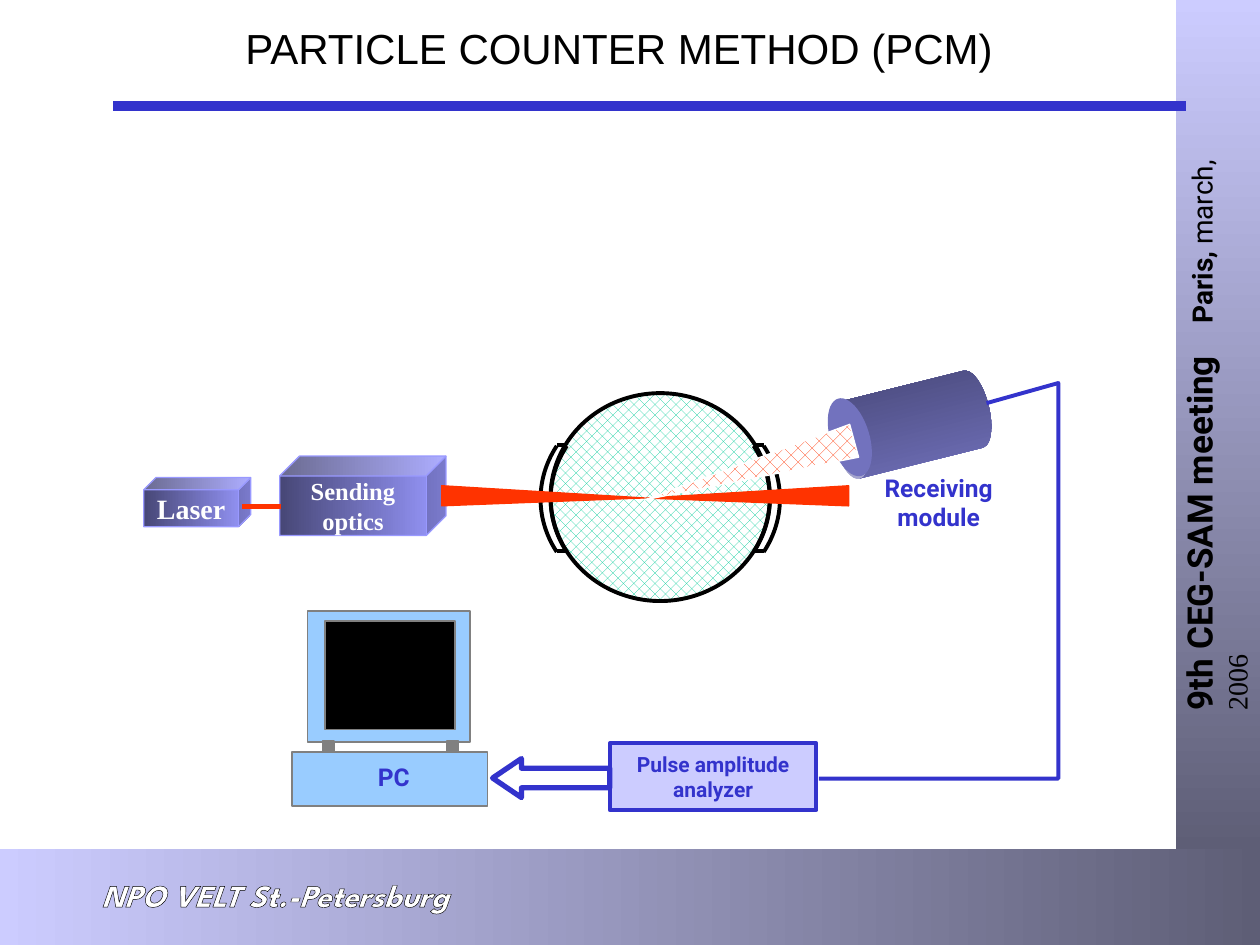
from lxml import etree
from pptx import Presentation
from pptx.dml.color import RGBColor
from pptx.enum.dml import MSO_PATTERN
from pptx.enum.shapes import MSO_CONNECTOR, MSO_SHAPE
from pptx.enum.text import MSO_ANCHOR, PP_ALIGN
from pptx.oxml.ns import qn
from pptx.util import Inches, Pt

RECT, OVAL, CUBE = MSO_SHAPE.RECTANGLE, MSO_SHAPE.OVAL, MSO_SHAPE.CUBE
CAN, ARC, WEDGE = MSO_SHAPE.CAN, MSO_SHAPE.ARC, MSO_SHAPE.ISOSCELES_TRIANGLE
ARROW = MSO_SHAPE.LEFT_ARROW
STRAIGHT = MSO_CONNECTOR.STRAIGHT
DENSE, SPARSE = map(MSO_PATTERN.from_xml, ("pct40", "pct25"))
MID, LOW = MSO_ANCHOR.MIDDLE, MSO_ANCHOR.BOTTOM
LEFT, CENTER = PP_ALIGN.LEFT, PP_ALIGN.CENTER

BLACK = RGBColor(0x00, 0x00, 0x00)
WHITE = RGBColor(0xFF, 0xFF, 0xFF)
BLUE = RGBColor(0x33, 0x33, 0xCC)
PALE = RGBColor(0xCC, 0xCC, 0xFF)
SLATE = RGBColor(0x5E, 0x5E, 0x76)
LILAC = RGBColor(0x99, 0x99, 0xFF)
NAVY = RGBColor(0x47, 0x47, 0x76)
STEEL = RGBColor(0x72, 0x72, 0xBE)
SKY = RGBColor(0x99, 0xCC, 0xFF)
GRAY = RGBColor(0x80, 0x80, 0x80)
RED = RGBColor(0xFF, 0x33, 0x00)
TEAL = RGBColor(0x00, 0xCC, 0x99)
SANS, SERIF = "Roboto", "Times New Roman"


def write(shape, *lines, size=14, font=SANS, color=BLUE, bold=True, italic=False,
          align=CENTER, anchor=MID, wrap=False):
    """Fill a shape with lines, each a string or a list of (text, changes) runs."""
    frame = shape.text_frame
    frame.word_wrap, frame.vertical_anchor = wrap, anchor
    for i, line in enumerate(lines):
        para = frame.add_paragraph() if i else frame.paragraphs[0]
        para.alignment = align
        for text, change in [(line, {})] if isinstance(line, str) else line:
            run = para.add_run()
            run.text = text
            look = run.font
            look.size = Pt(change.get("size", size))
            look.name = change.get("font", font)
            look.bold = change.get("bold", bold)
            look.italic = italic
            look.color.rgb = color
    return shape


class Board:
    """Hold the slide and its style, with one method for each kind of element."""

    def __init__(self, deck):
        self.slide = deck.slides.add_slide(deck.slide_layouts[6])
        self.shapes = self.slide.shapes

    def paint(self, item, fill, line, width):
        item.shadow.inherit = False
        if fill is None:
            item.fill.background()
        elif isinstance(fill, RGBColor):
            item.fill.solid()
            item.fill.fore_color.rgb = fill
        else:
            first, last, kind = fill
            if kind in (DENSE, SPARSE):
                item.fill.patterned()
                item.fill.pattern = kind
                item.fill.fore_color.rgb, item.fill.back_color.rgb = first, last
            else:
                item.fill.gradient()
                item.fill.gradient_angle = kind
                for stop, tone in zip(item.fill.gradient_stops, (first, last)):
                    stop.color.rgb = tone
        if line is None:
            item.line.fill.background()
        else:
            item.line.color.rgb, item.line.width = line, Pt(width)

    def shape(self, kind, box, fill, line=None, width=0.75, turn=0, adjust=()):
        item = self.shapes.add_shape(kind, *map(Inches, box))
        item.rotation = turn
        for i, value in enumerate(adjust):
            item.adjustments[i] = value
        self.paint(item, fill, line, width)
        return item

    def label(self, box, *lines, turn=0, **form):
        item = self.shapes.add_textbox(*map(Inches, box))
        item.rotation = turn
        return write(item, *lines, **form)

    def line(self, start, end, color, width):
        item = self.shapes.add_connector(STRAIGHT, *map(Inches, start + end))
        item.line.color.rgb, item.line.width = color, Pt(width)
        etree.SubElement(item._element.spPr, qn("a:effectLst"))

    def wire(self, points, color, width):
        spots = [(Inches(x), Inches(y)) for x, y in points]
        build = self.shapes.build_freeform(*spots[0])
        build.add_line_segments(spots[1:], close=False)
        self.paint(build.convert_to_shape(), None, color, width)


def outline(run, color, width):
    """Draw a line around the letters of a run."""
    edge = etree.Element(qn("a:ln"), w=str(Pt(width)))
    solid = etree.SubElement(edge, qn("a:solidFill"))
    etree.SubElement(solid, qn("a:srgbClr"), val=str(color))
    run.font._element.insert(0, edge)


def tab(para, place):
    """Set one left tab stop in a paragraph."""
    stops = etree.SubElement(para._p.get_or_add_pPr(), qn("a:tabLst"))
    etree.SubElement(stops, qn("a:tab"), pos=str(Inches(place)), algn="l")


def frame(board):
    """Draw the footer, the side band, the rule and the title."""
    board.shape(RECT, (0, 6.74, 10, 0.76), (PALE, SLATE, 0))
    name = board.label((0.67, 6.9, 3.03, 0.4), "NPO VELT St.-Petersburg", size=18,
                       font="League Spartan", color=WHITE, italic=True)
    outline(name.text_frame.paragraphs[0].runs[0], BLACK, 0.75)
    board.shape(RECT, (9.33, 0, 0.67, 6.74), (PALE, SLATE, 270))
    small = {"size": 16}
    event = [("9th CEG-SAM meeting\t", {}), ("Paris, ", small),
             ("march, ", {**small, "bold": False}),
             ("2006", {**small, "bold": False, "font": SERIF})]
    side = board.label((7.11, 2.85, 5, 0.77), event, turn=270, size=20, color=BLACK,
                       align=LEFT, anchor=LOW, wrap=True)
    tab(side.text_frame.paragraphs[0], 3.07)
    board.line((0.9, 0.84), (9.41, 0.84), BLUE, 6)
    board.label((1.85, 0.13, 6.26, 0.5), "PARTICLE COUNTER METHOD (PCM)", size=24,
                font="Arial", color=BLACK, bold=False, align=LEFT)


def cell(board):
    """Draw the round cell with a window on each side."""
    board.shape(OVAL, (4.37, 3.12, 1.74, 1.65), (TEAL, WHITE, DENSE), BLACK, 2.25)
    for left, mid in ((5.2, 0), (5.28, 0), (5.2, 180), (5.28, 180)):
        box = (left - 0.91, 3.14, 1.82, 1.64)
        span = [(mid + side) % 360 * 0.6 for side in (-28.3, 28.3)]
        board.shape(ARC, box, None, BLACK, 2.25, adjust=span)
    for x in (4.42, 5.99):
        for y in (3.53, 4.37):
            board.line((x, y), (x + 0.07, y), BLACK, 2.25)


def optics(board):
    """Draw the laser, the optics, the beams and the receiver."""
    metal = (NAVY, LILAC, 0)
    for box, lines, size in (((2.22, 3.62, 1.32, 0.63), ("Sending", "optics"), 14),
                             ((1.14, 3.79, 0.85, 0.39), ("Laser",), 16)):
        block = board.shape(CUBE, box, metal, LILAC, adjust=[0.25])
        write(block, *lines, size=size, font=SERIF, color=WHITE)
    board.line((1.92, 4.02), (2.23, 4.02), RED, 3)
    board.shape(CAN, (6.92, 2.74, 0.63, 1.26), (STEEL, NAVY, 0), turn=256, adjust=[0.4])
    board.shape(OVAL, (6.59, 3.15, 0.31, 0.64), STEEL, turn=343)
    for left, turn, tip in ((4.23, 90, 0.61), (5.85, 270, 0.39)):
        board.shape(WEDGE, (left, 3.13, 0.16, 1.61), RED, RED, turn=turn, adjust=[tip])
    board.shape(WEDGE, (5.81, 2.86, 0.27, 1.73), (RED, WHITE, SPARSE), WHITE,
                turn=254.8, adjust=[0.44])
    board.label((6.89, 3.7, 1.12, 0.57), "Receiving", "module")


def signal(board):
    """Draw the analyzer, its wire and the computer."""
    unit = board.shape(RECT, (4.84, 5.9, 1.64, 0.53), PALE, BLUE, 2.25)
    write(unit, "Pulse amplitude", "analyzer", size=12, wrap=True)
    for box, fill in (((2.32, 5.97, 1.55, 0.43), SKY), ((2.44, 4.85, 1.29, 1.04), SKY),
                      ((2.58, 4.93, 1.03, 0.86), BLACK),
                      ((2.56, 5.88, 0.09, 0.09), GRAY), ((3.55, 5.88, 0.09, 0.09), GRAY)):
        board.shape(RECT, box, fill, GRAY, 1)
    board.label((2.89, 6, 0.47, 0.33), "PC")
    board.wire([(7.83, 3.2), (8.4, 3.04), (8.4, 6.18), (6.5, 6.18)], BLUE, 2.25)
    board.shape(ARROW, (3.91, 6.02, 0.93, 0.31), WHITE, BLUE, 3, adjust=[0.5, 0.74])


def main():
    """Build the slide and save it."""
    deck = Presentation()
    deck.slide_width, deck.slide_height = Inches(10), Inches(7.5)
    board = Board(deck)
    for part in (frame, cell, optics, signal):
        part(board)
    deck.save("out.pptx")


if __name__ == "__main__":
    main()
